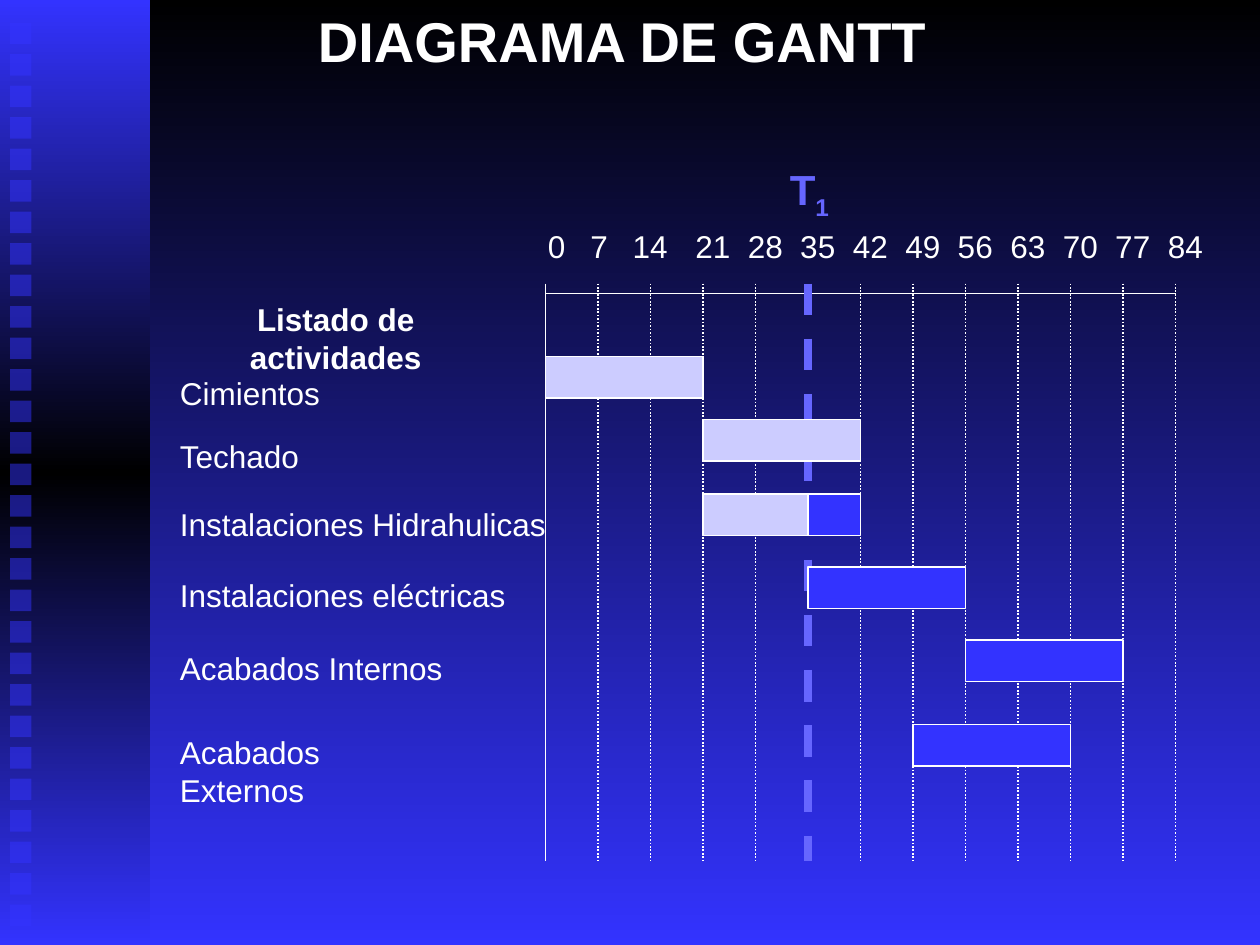
"""Build the Gantt diagram slide."""
from copy import deepcopy

from lxml.etree import SubElement
from pptx import Presentation
from pptx.dml.color import RGBColor
from pptx.enum.dml import MSO_LINE_DASH_STYLE as DASH
from pptx.enum.shapes import MSO_CONNECTOR as LINK, MSO_SHAPE as SHAPE
from pptx.enum.text import MSO_AUTO_SIZE as SIZE, PP_ALIGN as ALIGN
from pptx.oxml.ns import qn
from pptx.util import Inches, Pt


def color(code):
    return RGBColor.from_string(code)


def write(text, x, y, w, h, size=18, bold=False, align=ALIGN.LEFT, ink="FFFFFF", sub=""):
    box = slide.shapes.add_textbox(Inches(x), Inches(y), Inches(w), Inches(h))
    frame = box.text_frame
    frame.word_wrap = not sub
    frame.auto_size = SIZE.SHAPE_TO_FIT_TEXT
    par = frame.paragraphs[0]
    par.alignment = align
    for part in filter(None, (text, sub)):
        run = par.add_run()
        run.text = part
        run.font.name = "Arial"
        run.font.size = Pt(size)
        run.font.bold = bold
        run.font.color.rgb = color(ink)
        if part == sub:
            run.font._element.set("baseline", "-25000")


deck = Presentation()
deck.slide_width, deck.slide_height = Inches(10), Inches(7.5)
slide = deck.slides.add_slide(deck.slide_layouts[6])

panel = slide.shapes.add_shape(SHAPE.RECTANGLE, 0, 0, Inches(1.19), Inches(7.5))
panel.shadow.inherit = False
panel.line.fill.background()
for fill, first, last in (
    (slide.background.fill, "000000", "3333FF"),
    (panel.fill, "3333FF", "000000"),
):
    fill.gradient()
    fill.gradient_angle = 270
    for stop, code, pos in zip(fill.gradient_stops, (first, last), (0, 1)):
        stop.color.rgb = color(code)
        stop.position = pos
stops = panel._element.spPr.find(qn("a:gradFill")).find(qn("a:gsLst"))
stops.append(deepcopy(stops[0]))
for stop, pos in zip(panel.fill.gradient_stops, (0, 0.5, 1)):
    stop.position = pos

for i in range(29):
    dot = slide.shapes.add_shape(
        SHAPE.RECTANGLE, Inches(0.08), Inches(0.18 + 0.25 * i), Inches(0.17), Inches(0.17))
    dot.shadow.inherit = False
    dot.line.fill.background()
    dot.fill.solid()
    dot.fill.fore_color.rgb = color("3333FF")
    tint = dot._element.spPr.find(qn("a:solidFill"))[0]
    SubElement(tint, qn("a:alpha")).set("val", "50000")

left, step, now = 4.33, 5 / 12, 5
top, base, axis = 2.25, 6.83, 2.33
end = left + 12 * step
lines = [(left, axis, end, axis, "FFFFFF", 1, None)]
for i in range(13):
    x = left + i * step
    nudge = {0: 0.08, 2: -0.08}.get(i, 0)
    write(str(7 * i), x - 0.16 + nudge, 1.75, 0.5, 0.4)
    if i != now:
        lines.append((x, top, x, base, "FFFFFF", 1, DASH.ROUND_DOT if i else None))
mark = left + now * step
lines.append((mark, top, mark, base, "6666FF", 4.5, DASH.DASH))

for x1, y1, x2, y2, code, width, dash in lines:
    line = slide.shapes.add_connector(
        LINK.STRAIGHT, Inches(x1), Inches(y1), Inches(x2), Inches(y2))
    line.line.color.rgb = color(code)
    line.line.width = Pt(width)
    if dash:
        line.line.dash_style = dash
    SubElement(line._element.spPr, qn("a:effectLst"))

done, todo = "CCCCFF", "3333FF"
tasks = [
    ("Cimientos", 2.92, 2.33, 2.83, [(0, 3, done)]),
    ("Techado", 3.42, 2.33, 3.33, [(3, 3, done)]),
    ("Instalaciones Hidrahulicas", 3.96, 3.17, 3.92, [(3, 3, todo), (3, 2, done)]),
    ("Instalaciones eléctricas", 4.52, 3.17, 4.5, [(5, 3, todo)]),
    ("Acabados Internos", 5.1, 2.33, 5.08, [(8, 3, todo)]),
    ("Acabados Externos", 5.77, 2.33, 5.75, [(7, 3, todo)]),
]
for name, y, w, row, bars in tasks:
    write(name, 1.33, y, w, 0.4)
    for start, weeks, code in bars:
        bar = slide.shapes.add_shape(
            SHAPE.RECTANGLE, Inches(left + start * step), Inches(row),
            Inches(weeks * step), Inches(0.33))
        bar.shadow.inherit = False
        bar.fill.solid()
        bar.fill.fore_color.rgb = color(code)
        bar.line.color.rgb = color("FFFFFF")
        bar.line.width = Pt(1)

write("Listado de actividades", 1.33, axis, 2.67, 0.4, bold=True, align=ALIGN.CENTER)
write("DIAGRAMA DE GANTT ", 0, 0, 10, 0.63, size=32, bold=True, align=ALIGN.CENTER)
write("T", 6.17, 1.25, 0.53, 0.5, size=24, bold=True, ink="6666FF", sub="1")

deck.save("out.pptx")
